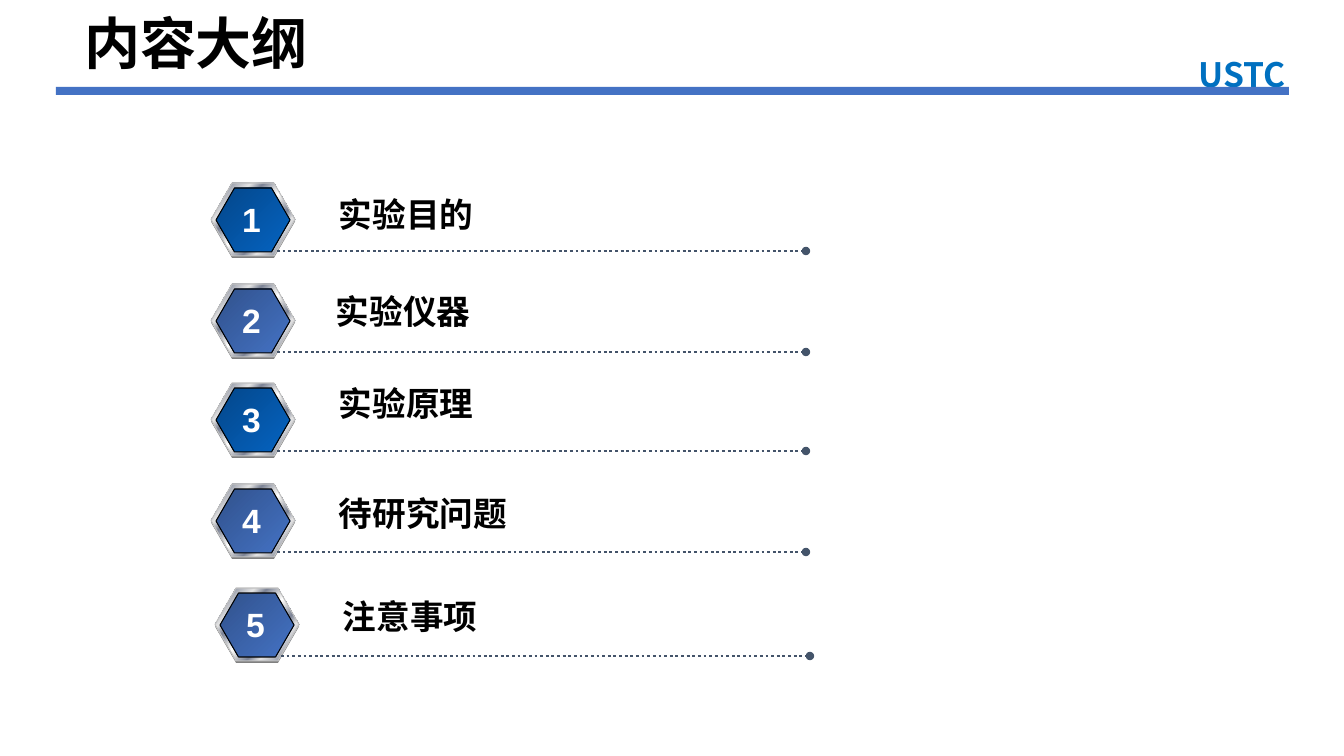
from lxml.etree import SubElement as Sub
from pptx import Presentation
from pptx.dml.color import RGBColor
from pptx.enum.dml import MSO_LINE as Dash
from pptx.enum.shapes import MSO_CONNECTOR as Link, MSO_SHAPE as Kind
from pptx.enum.text import MSO_ANCHOR as Anchor, MSO_AUTO_SIZE as Auto, PP_ALIGN as Align
from pptx.oxml.ns import qn
from pptx.util import Emu, Pt

NOTO, ARIAL = "Noto Sans CJK SC", "Arial"
DEEP = [(0, "04478A"), (100, "0563C1")]
SOFT = [(0, "31528C"), (100, "4472C4")]
STEEL = [(0, "E6E6E6"), (8, "7D8496"), (26, "E6E6E6"), (34, "7D8496"),
         (46, "E6E6E6"), (50, "FFFFFF"), (54, "E6E6E6"), (66, "7D8496"),
         (74, "E6E6E6"), (92, "7D8496"), (100, "E6E6E6")]

# number, label, colours, row left and top, label left and top, label width, font
ROWS = [
    ("1", "实验目的", DEEP, 211, 183, 118, 6, 166, ARIAL),
    ("2", "实验仪器", SOFT, 211, 284, 115, 2, 157, NOTO),
    ("3", "实验原理", DEEP, 211, 383, 118, -5, 157, NOTO),
    ("4", "待研究问题", SOFT, 211, 484, 118, 4, 190, NOTO),
    ("5", "注意事项", SOFT, 215, 588, 118, 3, 157, NOTO),
]


def px(*nums):
    """Turn px into EMU, at 100.8 px to the inch."""
    return [Emu(round(num * 914400 / 100.8)) for num in nums]


def rgb(code):
    return RGBColor.from_string(code)


def style(para, size, font, color, align):
    para.alignment = align
    face = para.font
    face.size, face.bold, face.name = Pt(size), True, font
    face.color.rgb = rgb(color)
    props = para._p.pPr.find(qn("a:defRPr"))
    Sub(props, qn("a:ea")).set("typeface", NOTO)


def write(shapes, box, text, font, color, align=Align.LEFT, wrap=False):
    frame = shapes.add_textbox(*px(*box)).text_frame
    frame.word_wrap = wrap
    frame.auto_size = Auto.SHAPE_TO_FIT_TEXT
    frame.text = text
    style(frame.paragraphs[0], 24, font, color, align)


def blend(fill, stops):
    """Fill with colour stops running to the lower right."""
    fill.gradient()
    fill.gradient_angle = 315
    grad = fill._fill._gradFill.find(qn("a:gsLst"))
    for old in list(grad):
        grad.remove(old)
    for pos, code in stops:
        stop = Sub(grad, qn("a:gs"), pos=str(pos * 1000))
        Sub(stop, qn("a:srgbClr"), val=code)


def block(shapes, kind, box, fill, edge=None):
    shape = shapes.add_shape(kind, *px(*box))
    shape.shadow.inherit = False
    if isinstance(fill, list):
        blend(shape.fill, fill)
    else:
        shape.fill.solid()
        shape.fill.fore_color.rgb = rgb(fill)
    if edge:
        shape.line.color.rgb = rgb(edge)
        shape.line.width = Pt(0.75)
    else:
        shape.line.fill.background()
    return shape


def hexa(shapes, box, fill, edge=None):
    block(shapes, Kind.HEXAGON, box, fill, edge).adjustments[0] = 0.289


def dots(shapes, x, y, end):
    """Dotted line that ends in a round dot."""
    line = shapes.add_connector(Link.STRAIGHT, *px(x, y, end, y))
    line.line.color.rgb = rgb("44546A")
    line.line.width = Pt(2)
    line.line.dash_style = Dash.ROUND_DOT
    Sub(line.line._ln, qn("a:tailEnd"), type="oval")
    Sub(line._element.spPr, qn("a:effectLst"))


def header(slide, x, y, w):
    group = slide.shapes.add_group_shape().shapes
    write(group, (x + 1083, y + 49, 206, 50), "USTC", NOTO, "0070C0",
          Align.CENTER, True)
    block(group, Kind.RECTANGLE, (x, y + 87, w, 8), "4472C4")
    title = slide.shapes.title
    title.left, title.top, title.width, title.height = px(x + 18, y + 3, 262, 78)
    frame = title.text_frame
    frame.text = "内容大纲"
    frame.vertical_anchor = Anchor.TOP
    frame.auto_size = Auto.NONE
    style(frame.paragraphs[0], 40, NOTO, "000000", Align.LEFT)


def row(slide, num, label, fill, x, y, dx, dy, wide, font):
    group = slide.shapes.add_group_shape().shapes
    hexa(group, (x, y + 2, 84, 73), "808080")
    hexa(group, (x, y, 84, 73), STEEL, "C0C0C0")
    hexa(group, (x + 5, y + 5, 74, 64), fill, "000000")
    dots(group, x + 66, y + 68, x + 595)
    write(group, (x + dx, y + dy, wide, 51), label, font, "000000")
    write(group, (x + 21, y + 11, 39, 50), num, ARIAL, "FFFFFF", Align.CENTER)


def main():
    deck = Presentation()
    deck.slide_width, deck.slide_height = px(1344, 756)
    slide = deck.slides.add_slide(deck.slide_layouts[5])
    header(slide, 56, 0, 1233)
    for item in ROWS:
        row(slide, *item)
    deck.save("out.pptx")


if __name__ == "__main__":
    main()
